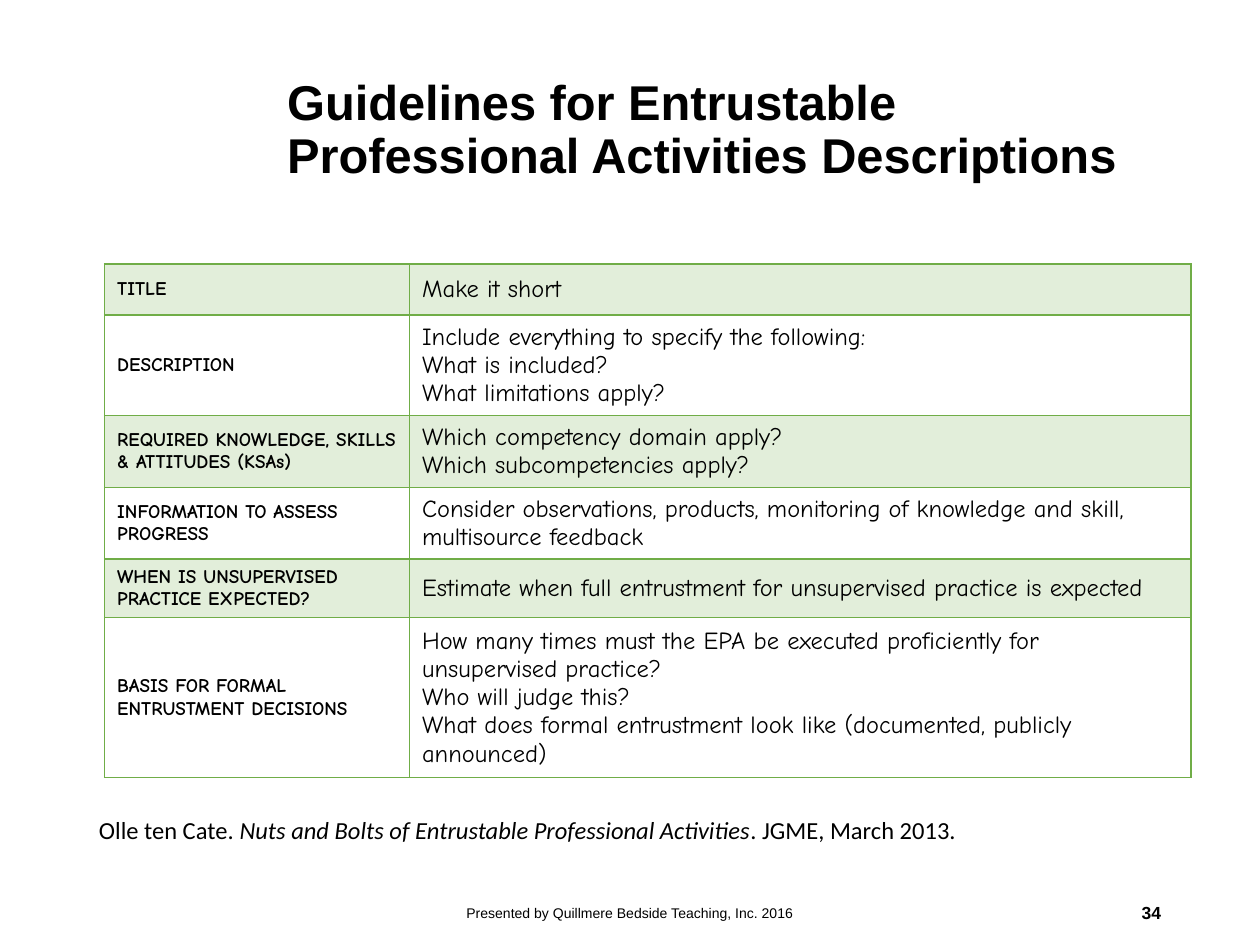
from lxml import etree
from pptx import Presentation
from pptx import util as u
from pptx.dml.color import RGBColor
from pptx.enum import text
from pptx.oxml.ns import qn

BLACK, GREEN = "000000", "70AD47"
ALIGN, ANCHOR = text.PP_ALIGN, text.MSO_ANCHOR
ROWS = [
    (29.25, "TITLE", ["Make it short"]),
    (57.5, "DESCRIPTION", ["Include everything to specify the following:",
                           "What is included?",
                           "What limitations apply?"]),
    (41, "REQUIRED KNOWLEDGE, SKILLS & ATTITUDES (KSAs)",
     ["Which competency domain apply?", "Which subcompetencies apply?"]),
    (41, "INFORMATION TO ASSESS PROGRESS",
     ["Consider observations, products, monitoring of knowledge and skill, multisource feedback"]),
    (33.5, "WHEN IS UNSUPERVISED PRACTICE EXPECTED?",
     ["Estimate when full entrustment for unsupervised practice is expected"]),
    (91.5, "BASIS FOR FORMAL ENTRUSTMENT DECISIONS",
     ["How many times must the EPA be executed proficiently for unsupervised practice?",
      "Who will judge this?",
      "What does formal entrustment look like (documented, publicly announced)"]),
]


def rgb(value):
    return RGBColor.from_string(value)


def style(p, size, font, bold=False, align=ALIGN.LEFT):
    p.alignment = align
    f = p.font
    f.size, f.name, f.bold = u.Pt(size), font, bold
    f.color.rgb = rgb(BLACK)


def add_text(s, box, runs, size, font, bold=False, align=ALIGN.LEFT,
             anchor=ANCHOR.MIDDLE, wrap=True):
    tf = s.shapes.add_textbox(*map(u.Pt, box)).text_frame
    tf.word_wrap, tf.vertical_anchor = wrap, anchor
    p = tf.paragraphs[0]
    for words, italic in runs:
        r = p.add_run()
        r.text = words
        if italic:
            r.font.italic = True
    style(p, size, font, bold, align)
    return tf


def add_borders(cell):
    tc_pr = cell._tc.get_or_add_tcPr()
    for i, side in enumerate(("lnL", "lnR", "lnT", "lnB")):
        ln = etree.Element(qn("a:" + side), w=str(u.Pt(1)))
        fill = etree.SubElement(ln, qn("a:solidFill"))
        etree.SubElement(fill, qn("a:srgbClr"), val=GREEN)
        tc_pr.insert(i, ln)


def fill_cell(cell, shaded):
    if not shaded:
        cell.fill.background()
        return
    cell.fill.solid()
    cell.fill.fore_color.rgb = rgb(GREEN)
    color = cell._tc.tcPr.find(qn("a:solidFill")).find(qn("a:srgbClr"))
    etree.SubElement(color, qn("a:alpha"), val="20000")


def set_cell(cell, lines, size, bold, shaded):
    cell.text = "\n".join(lines)
    cell.vertical_anchor = ANCHOR.MIDDLE
    for p in cell.text_frame.paragraphs:
        style(p, size, "Comic Neue", bold)
    fill_cell(cell, shaded)
    add_borders(cell)


def add_guidelines(s, left, top, widths):
    height = sum(row[0] for row in ROWS)
    table = s.shapes.add_table(len(ROWS), len(widths), u.Pt(left), u.Pt(top),
                               u.Pt(sum(widths)), u.Pt(height)).table
    table.first_row = table.horz_banding = False
    for column, width in zip(table.columns, widths):
        column.width = u.Pt(width)
    for i, (row_height, label, lines) in enumerate(ROWS):
        table.rows[i].height = u.Pt(row_height)
        shaded = i % 2 == 0
        set_cell(table.cell(i, 0), [label], 11, True, shaded)
        set_cell(table.cell(i, 1), lines, 14, False, shaded)


def main():
    prs = Presentation()
    prs.slide_width, prs.slide_height = u.Pt(720), u.Pt(540)
    s = prs.slides.add_slide(prs.slide_layouts[6])
    add_guidelines(s, 59.75, 150.75, (174.25, 446.5))
    title = add_text(s, (157, 38, 514, 104.5),
                     [("Guidelines for Entrustable Professional Activities Descriptions", False)],
                     27.9, "Arial", bold=True)
    title.margin_bottom = u.Pt(34)
    title.paragraphs[0].line_spacing = 0.9
    add_text(s, (238.5, 507, 243, 29),
             [("Presented by Quillmere Bedside Teaching, Inc. 2016", False)],
             8, "Arial", align=ALIGN.CENTER)
    add_text(s, (49.5, 462.25, 509, 24.5),
             [("Olle ten Cate. ", False),
              ("Nuts and Bolts of Entrustable Professional Activities", True),
              (". JGME, March 2013.", False)],
             14, "Calibri", anchor=ANCHOR.TOP, wrap=False)
    add_text(s, (508.5, 507, 162, 29), [("34", False)],
             10, "Arial", bold=True, align=ALIGN.RIGHT)
    prs.save("out.pptx")


if __name__ == "__main__":
    main()
